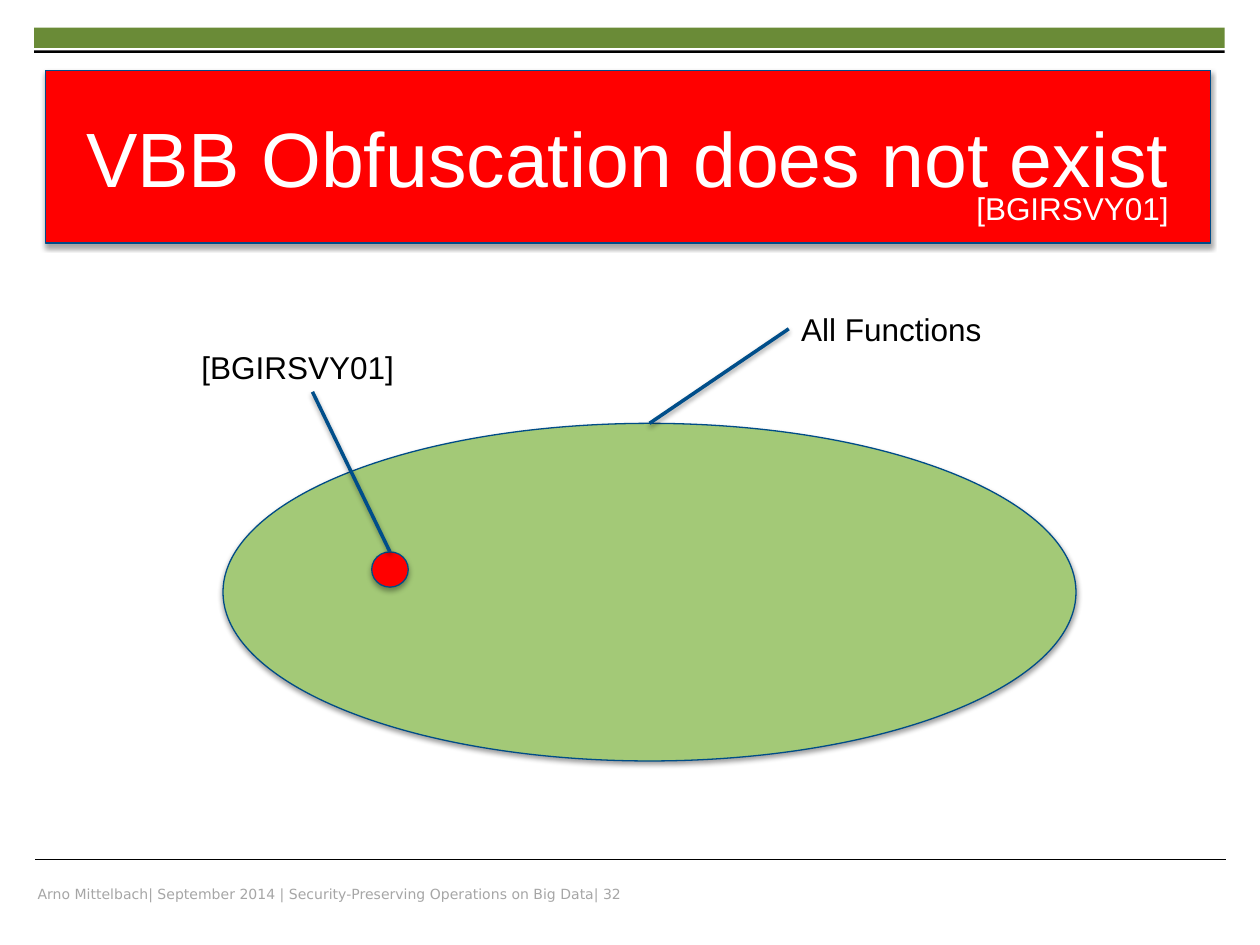
from dataclasses import dataclass

from lxml.etree import SubElement
from pptx import Presentation
from pptx.dml.color import RGBColor
from pptx.enum.shapes import MSO_CONNECTOR, MSO_SHAPE
from pptx.enum.text import MSO_ANCHOR, MSO_AUTO_SIZE, PP_ALIGN
from pptx.oxml.ns import qn
from pptx.shapes.autoshape import Shape
from pptx.shapes.connector import Connector
from pptx.slide import Slide
from pptx.util import Inches, Length, Pt

RED = RGBColor(0xFF, 0x00, 0x00)
GREEN = RGBColor(0xA3, 0xC9, 0x77)
OLIVE = RGBColor(0x6A, 0x8B, 0x37)
EDGE = RGBColor(0x00, 0x4C, 0x87)
BLUE = RGBColor(0x00, 0x4E, 0x8A)
BLACK = RGBColor(0x00, 0x00, 0x00)
WHITE = RGBColor(0xFF, 0xFF, 0xFF)
GREY = RGBColor(0xA6, 0xA6, 0xA6)

# The slide is a grid of 40 columns by 30 rows.
COLS, ROWS = 40, 30
CELL = Inches(0.25)


@dataclass
class Box:
    col: float
    row: float
    cols: float
    rows: float

    def place(self) -> list[Length]:
        return [grid(n) for n in (self.col, self.row, self.cols, self.rows)]


@dataclass
class Label:
    text: str
    box: Box
    color: RGBColor = BLACK
    size: int = 18
    font: str = "Arial"


@dataclass
class Blob:
    box: Box
    fill: RGBColor
    alpha: int
    drop: float
    tip: tuple[float, float]


BANNER = Box(1.44, 2.24, 37, 5.48)
BARS = [(Box(1.08, 0.88, 37.8, 0.64), OLIVE), (Box(1.08, 1.6, 37.8, 0.08), BLACK)]
BLOBS = [
    Blob(Box(7.08, 13.44, 27.08, 10.72), GREEN, 38, 1.6, (25.04, 10.44)),
    Blob(Box(11.8, 17.52, 1.16, 1.12), RED, 35, 1.8, (9.92, 12.44)),
]
LABELS = [
    Label("[BGIRSVY01]", Box(30.6, 5.8, 7, 1.6), WHITE),
    Label("All Functions", Box(25.04, 9.64, 6.64, 1.6)),
    Label("[BGIRSVY01]", Box(6, 10.84, 7, 1.6)),
    Label("Arno Mittelbach| September 2014 | Security-Preserving Operations on Big Data| 32",
          Box(0.8, 27.92, 20.68, 0.96), GREY, 8, "DejaVu Sans"),
]


def grid(n: float) -> Length:
    return Length(round(n * CELL))


def shade(item: Shape | Connector, alpha: int = 0, drop: float = 0) -> None:
    """Give a soft shadow straight down, or none when alpha is 0."""
    props = item._element.spPr
    for old in props.findall(qn("a:effectLst")):
        props.remove(old)
    fx = SubElement(props, qn("a:effectLst"))
    if alpha:
        cast = SubElement(fx, qn("a:outerShdw"), blurRad=str(Pt(3.1)),
                          dist=str(Pt(drop)), dir="5400000", rotWithShape="0")
        tone = SubElement(cast, qn("a:srgbClr"), val=str(BLACK))
        SubElement(tone, qn("a:alpha"), val=str(alpha * 1000))


def paint(shape: Shape, fill: RGBColor, edge: RGBColor | None = None) -> None:
    shape.fill.solid()
    shape.fill.fore_color.rgb = fill
    if edge is None:
        shape.line.fill.background()
    else:
        shape.line.color.rgb = edge
        shape.line.width = Pt(0.75)


def write(shape: Shape, text: str, color: RGBColor, size: int, font: str) -> None:
    shape.text_frame.text = text
    face = shape.text_frame.paragraphs[0].runs[0].font
    face.name, face.size, face.color.rgb = font, Pt(size), color


def add_title(slide: Slide) -> None:
    title = slide.shapes.title
    title.left, title.top, title.width, title.height = BANNER.place()
    form = SubElement(title._element.spPr, qn("a:prstGeom"), prst="roundRect")
    SubElement(form, qn("a:avLst"))
    paint(title, RED, EDGE)
    shade(title, 35, 1.8)
    write(title, "VBB Obfuscation does not exist", WHITE, 44, "Arial")
    frame = title.text_frame
    frame.auto_size = MSO_AUTO_SIZE.NONE
    frame.vertical_anchor = MSO_ANCHOR.MIDDLE
    frame.paragraphs[0].alignment = PP_ALIGN.CENTER


def add_bar(slide: Slide, box: Box, fill: RGBColor) -> None:
    bar = slide.shapes.add_shape(MSO_SHAPE.RECTANGLE, *box.place())
    paint(bar, fill)
    shade(bar)


def add_line(slide: Slide, start: tuple[float, float], end: tuple[float, float],
             color: RGBColor, width: float) -> Connector:
    ends = [grid(n) for n in (*start, *end)]
    line = slide.shapes.add_connector(MSO_CONNECTOR.STRAIGHT, *ends)
    line.line.color.rgb = color
    line.line.width = Pt(width)
    return line


def add_blob(slide: Slide, blob: Blob) -> None:
    """Draw an ellipse and the line from its top to its label."""
    oval = slide.shapes.add_shape(MSO_SHAPE.OVAL, *blob.box.place())
    paint(oval, blob.fill, EDGE)
    shade(oval, blob.alpha, blob.drop)
    top = (blob.box.col + blob.box.cols / 2, blob.box.row)
    line = add_line(slide, top, blob.tip, BLUE, 2)
    line.begin_connect(oval, 0)
    shade(line, 38, 1.6)


def add_label(slide: Slide, label: Label) -> None:
    box = slide.shapes.add_textbox(*label.box.place())
    box.text_frame.word_wrap = True
    write(box, label.text, label.color, label.size, label.font)


def main() -> None:
    deck = Presentation()
    deck.slide_width, deck.slide_height = grid(COLS), grid(ROWS)
    slide = deck.slides.add_slide(deck.slide_layouts[5])
    add_title(slide)
    for box, fill in BARS:
        add_bar(slide, box, fill)
    shade(add_line(slide, (1.12, 27.28), (38.92, 27.28), BLACK, 0.6))
    for blob in BLOBS:
        add_blob(slide, blob)
    for label in LABELS:
        add_label(slide, label)
    deck.save("out.pptx")


if __name__ == "__main__":
    main()
